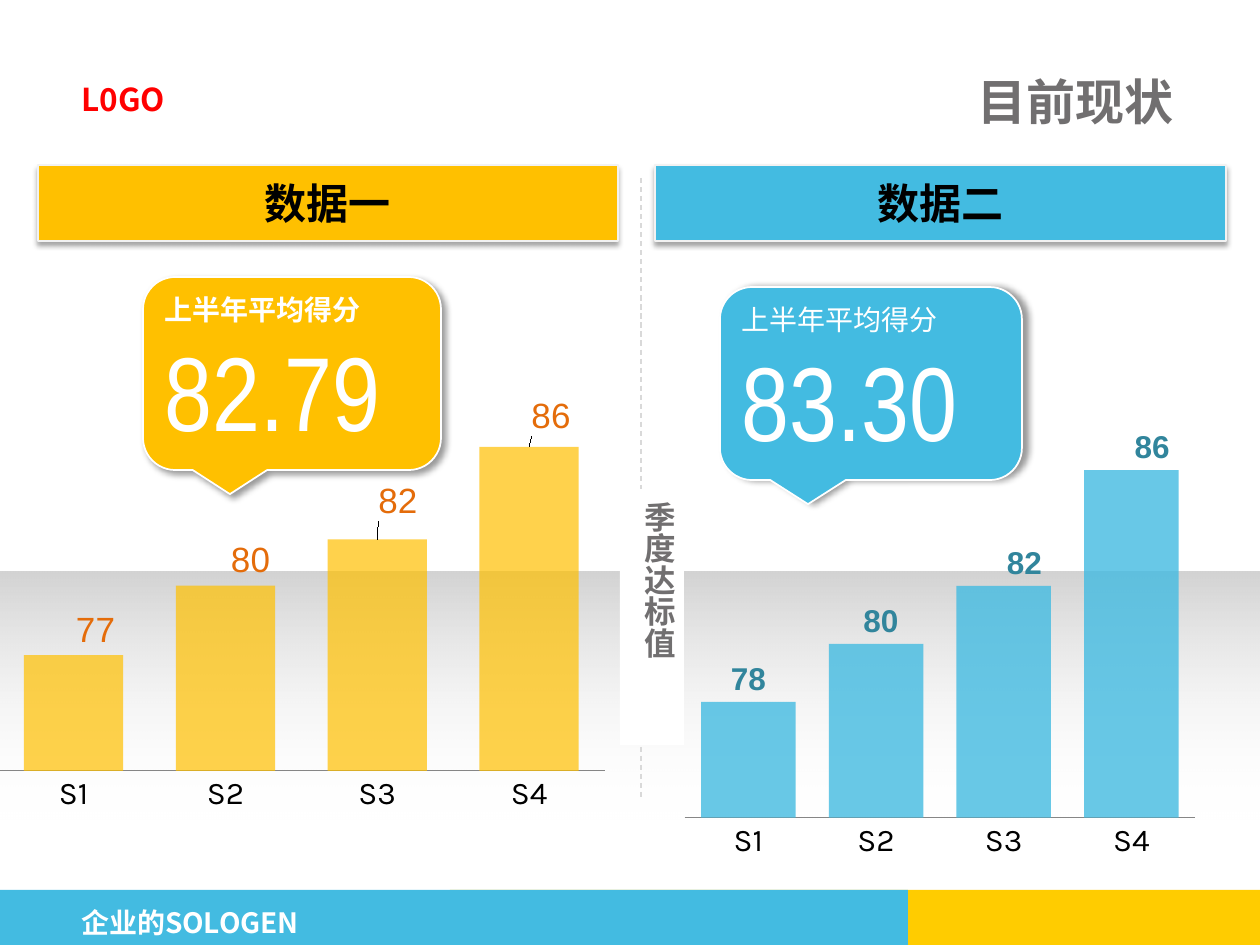
from lxml import etree
from pptx import Presentation
from pptx import util as u
from pptx.chart import data as chart_data
from pptx.dml.color import RGBColor
from pptx.enum import chart as ch, dml, shapes, text
from pptx.oxml import parse_xml
from pptx.oxml.ns import nsdecls, qn

PX = 914400 / 126
CJK = "Noto Sans CJK SC"
WHITE, GREY, AMBER, BLUE = "FFFFFF", "716F70", "FFC000", "43BBE1"
LEFT, CENTER, RIGHT = text.PP_ALIGN.LEFT, text.PP_ALIGN.CENTER, text.PP_ALIGN.RIGHT
TOP, MIDDLE = text.MSO_ANCHOR.TOP, text.MSO_ANCHOR.MIDDLE
RECT = shapes.MSO_SHAPE.RECTANGLE
CALLOUT = shapes.MSO_SHAPE.ROUNDED_RECTANGULAR_CALLOUT

prs = Presentation()
prs.slide_width, prs.slide_height = u.Inches(10), u.Inches(7.5)
slide = prs.slides.add_slide(prs.slide_layouts[6])
color = RGBColor.from_string


def box(at, fill=None, lines=(), kind=RECT, line=None, shadow=None, align=LEFT, anchor=TOP):
    """Draw a shape or, without fill, a text box; lines hold (text, size, font, colour, bold)."""
    place = [round(v * PX) for v in at]
    if fill:
        shape = slide.shapes.add_shape(kind, *place)
        shape.shadow.inherit = False
        shape.fill.solid()
        shape.fill.fore_color.rgb = color(fill)
        if line:
            shape.line.color.rgb, shape.line.width = color(line[0]), u.Pt(line[1])
        else:
            shape.line.fill.background()
    else:
        shape = slide.shapes.add_textbox(*place)
    if shadow:
        alpha, blur, dist, angle = shadow
        effects = shape._element.spPr.find(qn("a:effectLst"))
        effects.append(parse_xml(
            f'<a:outerShdw {nsdecls("a")} blurRad="{u.Pt(blur)}" dist="{u.Pt(dist)}" '
            f'dir="{angle * 60000}" algn="ctr" rotWithShape="0"><a:srgbClr val="000000">'
            f'<a:alpha val="{alpha * 1000}"/></a:srgbClr></a:outerShdw>'))
    frame = shape.text_frame
    frame.word_wrap, frame.vertical_anchor = True, anchor
    for i, (words, size, font, ink, bold) in enumerate(lines):
        para = frame.add_paragraph() if i else frame.paragraphs[0]
        para.alignment = align
        run = para.add_run()
        run.text = words
        run.font.size, run.font.name, run.font.bold = u.Pt(size), font, bold
        run.font.color.rgb = color(ink)
        etree.SubElement(run._r.get_or_add_rPr(), qn("a:ea")).set("typeface", font)
    return shape


def set_alpha(element, percents):
    for clr, percent in zip(element.iter(qn("a:srgbClr")), percents):
        etree.SubElement(clr, qn("a:alpha")).set("val", str(percent * 1000))


# Footer and logo text
box((450, 890, 811, 56), "FFCC00")
box((0, 890, 908, 56), BLUE)
slogan = box((69, 883, 630, 63), lines=[("企业的SOLOGEN", 16, CJK, WHITE, True)])
slogan.text_frame.paragraphs[0].line_spacing = 1.5
logo = box((69, 74, 113, 50), lines=[("L0GO", 18, CJK, "FF0000", True)])
logo.text_frame.word_wrap = False

# Fading floor band
band = box((1, 572, 1260, 248), WHITE)
band.fill.gradient()
band.fill.gradient_angle = 270
for stop, tone in zip(band.fill.gradient_stops, ("C2C2C2", WHITE)):
    stop.color.rgb = color(tone)
set_alpha(band._element.spPr, (72, 2))

# Dashed divider
divider = slide.shapes.add_connector(
    shapes.MSO_CONNECTOR.STRAIGHT, *[round(v * PX) for v in (641, 178, 641, 798)])
divider.line.color.rgb, divider.line.width = color("D9D9D9"), u.Pt(0.75)
divider.line.dash_style = dml.MSO_LINE.DASH
etree.SubElement(divider._element.spPr, qn("a:effectLst"))

# Title and column headings
box((252, 47, 934, 107), lines=[("目前现状", 28, CJK, GREY, True)], align=RIGHT, anchor=MIDDLE)
for left, width, fill, heading in ((38, 580, AMBER, "数据一"), (655, 571, BLUE, "数据二")):
    box((left, 165, width, 76), fill, [(heading, 24, CJK, "000000", True)],
        line=("F2F2F2", 0.75), shadow=(35, 3.1, 1.8, 90), align=CENTER, anchor=MIDDLE)

# Quarterly charts: place, scores, axis range, gap, fill, alpha, label style,
# plot area in fractions, label shifts in px
charts = [
    ((-25, 353, 649, 476), (77, 80, 82, 86), (72, 88), 53, AMBER, 70, (20, "E46C0A", False),
     (0.035, 0.1, 0.936, 0.778), ((22, 0), (25, 0), (21, -13), (22, -5))),
    ((674, 403, 532, 466), (78, 80, 82, 86), (74, 88), 35, BLUE, 80, (18, "31859C", True),
     (0.02, 0.02, 0.96, 0.87), ((0, 0), (5, 0), (21, 0), (21, 0))),
]
for at, scores, limits, gap, fill, alpha, (size, ink, bold), plot_at, shifts in charts:
    data = chart_data.CategoryChartData()
    data.categories = ["S1", "S2", "S3", "S4"]
    data.add_series("Series 1", scores)
    chart = slide.shapes.add_chart(
        ch.XL_CHART_TYPE.COLUMN_CLUSTERED, *[round(v * PX) for v in at], data).chart
    chart.has_legend = chart.has_title = False
    chart.font.size, chart.font.name = u.Pt(18), "Karla"
    chart.font.color.rgb = color("000000")
    plot = chart.plots[0]
    plot.gap_width, plot.vary_by_categories = gap, False

    quarters, values = chart.category_axis, chart.value_axis
    quarters.major_tick_mark = ch.XL_TICK_MARK.NONE
    quarters.format.line.color.rgb = color("868686")
    values.minimum_scale, values.maximum_scale = limits
    values.has_major_gridlines = values.visible = False

    area = chart._chartSpace.chart.plotArea
    for old in area.findall(qn("c:layout")):
        area.remove(old)
    sides = "".join(f'<c:{tag} val="{v}"/>' for tag, v in zip("xywh", plot_at))
    area.insert(0, parse_xml(
        f'<c:layout {nsdecls("c")}><c:manualLayout><c:layoutTarget val="inner"/>'
        f'<c:xMode val="edge"/><c:yMode val="edge"/>{sides}</c:manualLayout></c:layout>'))

    series = plot.series[0]
    series.format.fill.solid()
    series.format.fill.fore_color.rgb = color(fill)
    set_alpha(series._element, (alpha,))
    for i, (dx, dy) in enumerate(shifts):
        label = series.points[i].data_label
        label.position = ch.XL_LABEL_POSITION.OUTSIDE_END
        label.font.size, label.font.name, label.font.bold = u.Pt(size), "Arial", bold
        label.font.color.rgb = color(ink)
        mark = series._element.findall(".//" + qn("c:dLbl"))[i]
        mark.insert(1, parse_xml(
            f'<c:layout {nsdecls("c")}><c:manualLayout><c:x val="{dx / at[2]:.3f}"/>'
            f'<c:y val="{dy / at[3]:.3f}"/></c:manualLayout></c:layout>'))

# Vertical caption between the charts
caption = box((620, 489, 64, 256), WHITE, [("季度达标值", 18, CJK, GREY, True)],
              align=text.PP_ALIGN.JUSTIFY)
caption.text_frame._txBody.bodyPr.set("vert", "eaVert")

# Average score callouts
for at, fill, score, bold, angle in (
        ((720, 287, 302, 193), BLUE, "83.30", False, 0),
        ((143, 277, 298, 193), AMBER, "82.79", True, 45)):
    box(at, fill, [("上半年平均得分", 16, CJK, WHITE, bold),
                   (score, 60, "Arial Narrow", WHITE, False)],
        kind=CALLOUT, line=(WHITE, 1), shadow=(40, 4, 3, angle))

prs.save("out.pptx")
